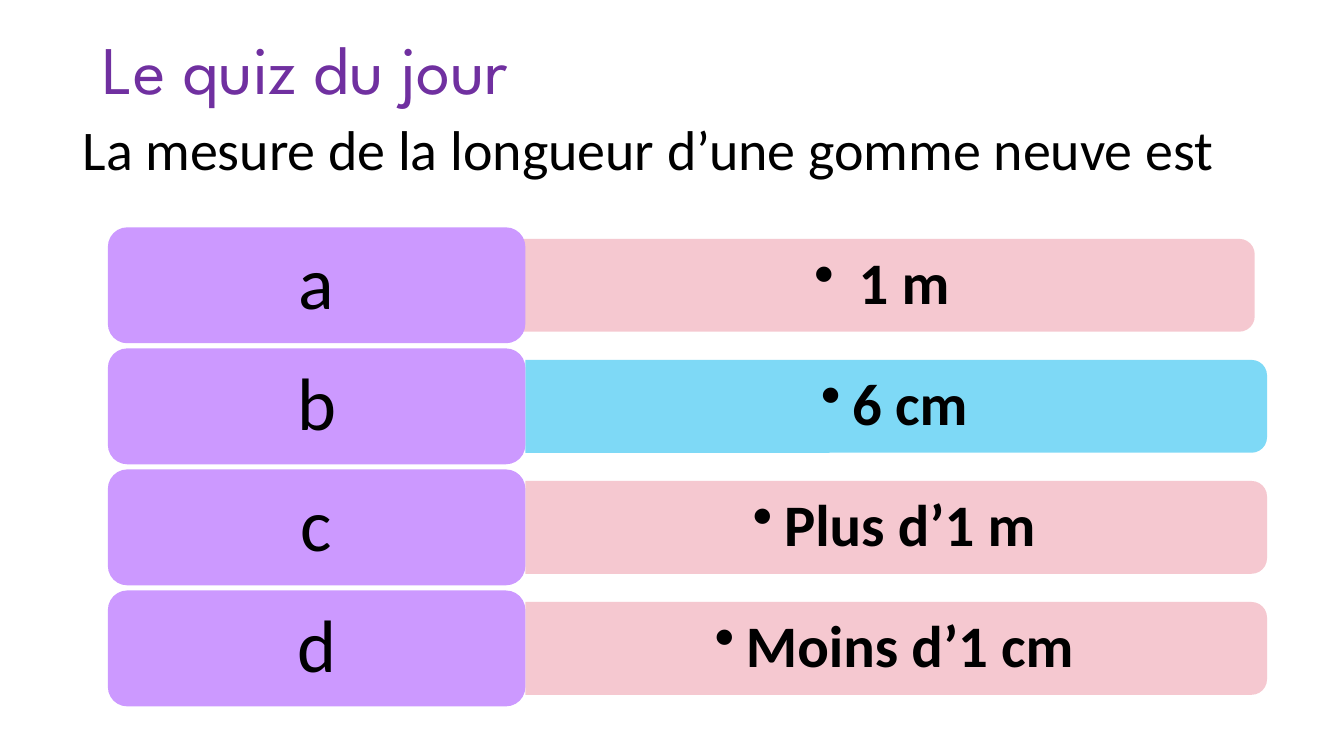
"""Build the quiz slide with four lettered answers."""
import pptx
import pptx.util
import pptx.dml.color
import pptx.enum.shapes
import pptx.enum.text
import pptx.oxml
import pptx.oxml.ns
from pptx.util import Cm

ALIGN = pptx.enum.text.PP_ALIGN
SHAPES = pptx.enum.shapes.MSO_SHAPE


def paint(target, color):
    """Fill a shape with a solid colour, without line or shadow."""
    target.fill.solid()
    target.fill.fore_color.rgb = pptx.dml.color.RGBColor.from_string(color)
    target.line.fill.background()
    target.shadow.inherit = False


def write(shape, text, size, color="000000", font="Calibri", align=ALIGN.CENTER,
          bold=False, spacing=0.9, margins=(0.25, 0.13)):
    """Put one formatted paragraph in a shape and return it."""
    frame = shape.text_frame
    frame.word_wrap = True
    frame.vertical_anchor = pptx.enum.text.MSO_ANCHOR.MIDDLE
    frame.margin_left = frame.margin_right = Cm(margins[0])
    frame.margin_top = frame.margin_bottom = Cm(margins[1])
    paragraph = frame.paragraphs[0]
    paragraph.text = text
    paragraph.alignment = align
    paragraph.line_spacing = spacing
    paragraph.font.name = font
    paragraph.font.size = pptx.util.Pt(size)
    paragraph.font.bold = bold
    paragraph.font.color.rgb = pptx.dml.color.RGBColor.from_string(color)
    return paragraph


presentation = pptx.Presentation()
presentation.slide_width = Cm(33.87)
presentation.slide_height = Cm(19.05)
slide = presentation.slides.add_slide(presentation.slide_layouts[6])

title = slide.shapes.add_textbox(Cm(2.33), Cm(0.69), Cm(29.21), Cm(2.26))
write(title, "Le quiz du jour", 48.6, "7030A0", "League Spartan", ALIGN.LEFT)

PINK, BLUE, PURPLE = "F5C3CB", "7ED9F6", "CC99FF"
answers = [
    ("a", " 1 m", PINK, 12.93),
    ("b", "6 cm", BLUE, 13.24),
    ("c", "Plus d’1 m", PINK, 13.24),
    ("d", "Moins d’1 cm", PINK, 13.24),
]
FIRST_TOP, PITCH = 5.73, 3.05
TAG_WIDTH, TAG_HEIGHT = 10.52, 2.92
BAR_LENGTH, BAR_THICKNESS = 18.69, 2.34
ANSWER_HEIGHT = 2.11

for row, (letter, answer, color, bar_left) in enumerate(answers):
    top = FIRST_TOP + row * PITCH
    middle = top + TAG_HEIGHT / 2

    bar = slide.shapes.add_shape(
        SHAPES.ROUND_2_SAME_RECTANGLE,
        Cm(bar_left + (BAR_LENGTH - BAR_THICKNESS) / 2), Cm(middle - BAR_LENGTH / 2),
        Cm(BAR_THICKNESS), Cm(BAR_LENGTH))
    bar.rotation = 90
    paint(bar, color)
    if color == PINK:
        fill_color = bar.fill._xPr.find(".//" + pptx.oxml.ns.qn("a:srgbClr"))
        fill_color.append(pptx.oxml.parse_xml(
            f'<a:alpha {pptx.oxml.ns.nsdecls("a")} val="90000"/>'))

    answer_box = slide.shapes.add_textbox(
        Cm(bar_left), Cm(middle - ANSWER_HEIGHT / 2), Cm(18.59), Cm(ANSWER_HEIGHT))
    paragraph = write(answer_box, answer, 42, bold=True, margins=(0.43, 0.24))
    properties = paragraph._p.get_or_add_pPr()
    properties.set("marL", str(Cm(0.79)))
    properties.set("indent", str(Cm(-0.79)))
    bullet = pptx.oxml.parse_xml(f'<a:buChar {pptx.oxml.ns.nsdecls("a")} char="•"/>')
    properties.insert_element_before(bullet, "a:tabLst", "a:defRPr", "a:extLst")

    tag = slide.shapes.add_shape(
        SHAPES.ROUNDED_RECTANGLE, Cm(2.72), Cm(top), Cm(TAG_WIDTH), Cm(TAG_HEIGHT))
    paint(tag, PURPLE)
    write(tag, letter, 53, margins=(0.56, 0.28))

question = slide.shapes.add_textbox(Cm(1.12), Cm(2.74), Cm(30.43), Cm(1.96))
write(question, "La mesure de la longueur d’une gomme neuve est", 40, spacing=1.0)

presentation.save("out.pptx")
